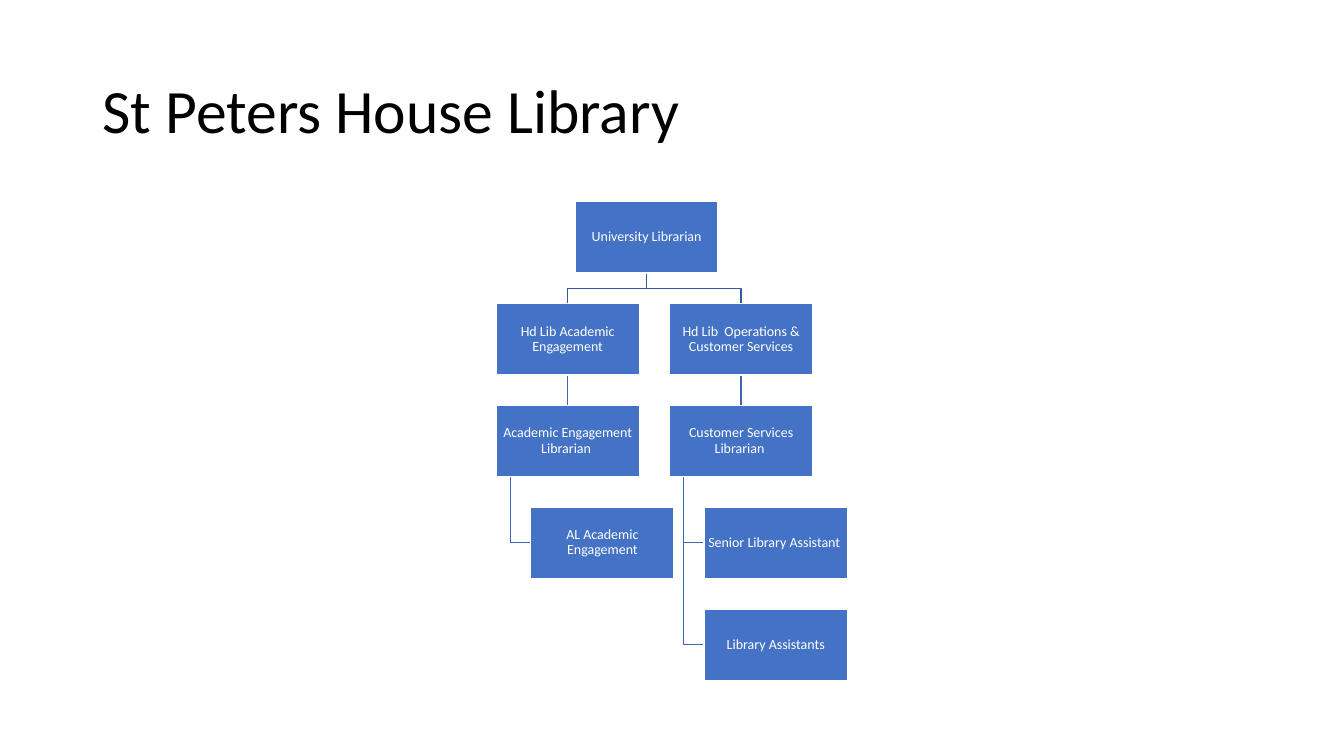
"""Build the St Peters House Library staff chart."""
from dataclasses import dataclass
from typing import Optional

from lxml import etree
from pptx import Presentation
from pptx.dml.color import RGBColor
from pptx.enum.shapes import MSO_CONNECTOR, MSO_SHAPE
from pptx.enum.text import MSO_ANCHOR, PP_ALIGN
from pptx.oxml.ns import qn
from pptx.util import Inches, Pt

RECTANGLE = MSO_SHAPE.RECTANGLE
STRAIGHT = MSO_CONNECTOR.STRAIGHT
MIDDLE = MSO_ANCHOR.MIDDLE
LEFT, CENTER = PP_ALIGN.LEFT, PP_ALIGN.CENTER

BLACK = RGBColor(0x00, 0x00, 0x00)
WHITE = RGBColor(0xFF, 0xFF, 0xFF)
BOX_BLUE = RGBColor(0x44, 0x72, 0xC4)
TOP_LINK_BLUE = RGBColor(0x36, 0x5B, 0x9D)
LINK_BLUE = RGBColor(0x3E, 0x67, 0xB2)

GRID_LEFT, GRID_TOP = 4.92, 2.0
COLUMN_STEP, ROW_STEP = 1.72, 1.01
BOX_WIDTH, BOX_HEIGHT = 1.42, 0.71
HANG_SHARE = 0.1
INDENT = 0.2

TITLE_FONT = {"name": "Calibri", "size": Pt(44)}
POST_FONT = {"name": "Calibri", "size": Pt(10)}
TITLE_PARA = {"alignment": LEFT, "line_spacing": 0.9}
POST_PARA = {"alignment": CENTER, "line_spacing": 0.9, "space_after": Pt(3.5)}
FRAME = {"word_wrap": True, "vertical_anchor": MIDDLE}
POST_FRAME = FRAME | {f"margin_{side}": Inches(0.01) for side in ("left", "top", "right", "bottom")}


@dataclass(frozen=True)
class Post:
    """A post on the chart, placed by grid column and row."""
    label: str
    column: float
    row: int
    manager: Optional["Post"] = None
    hangs: bool = False

    @property
    def left(self) -> float:
        """Return the left edge in inches."""
        return GRID_LEFT + self.column * COLUMN_STEP

    @property
    def top(self) -> float:
        """Return the top edge in inches."""
        return GRID_TOP + self.row * ROW_STEP


HEAD = Post("University Librarian", 0.455, 0)
ACADEMIC = Post("Hd Lib Academic Engagement", 0, 1, HEAD)
ENGAGEMENT = Post("Academic Engagement Librarian ", 0, 2, ACADEMIC)
OPERATIONS = Post("Hd Lib  Operations & Customer Services", 1, 1, HEAD)
CUSTOMER = Post("Customer Services Librarian ", 1, 2, OPERATIONS)
POSTS = [
    HEAD, ACADEMIC, ENGAGEMENT,
    Post("AL Academic Engagement", INDENT, 3, ENGAGEMENT, True),
    OPERATIONS, CUSTOMER,
    Post("Senior Library Assistant ", 1 + INDENT, 3, CUSTOMER, True),
    Post("Library Assistants", 1 + INDENT, 4, CUSTOMER, True),
]


def apply_format(target: object, values: dict) -> None:
    """Set each named attribute on the target."""
    for name, value in values.items():
        setattr(target, name, value)


def write_text(box, text: str, frame: dict, para_format: dict, font: dict, color: RGBColor) -> None:
    """Write one formatted paragraph into a box."""
    apply_format(box.text_frame, frame)
    para = box.text_frame.paragraphs[0]
    apply_format(para, para_format)
    span = para.add_run()
    span.text = text
    apply_format(span.font, font)
    span.font.color.rgb = color


def link_points(manager: Post, post: Post) -> list[tuple[int, int]]:
    """Return the corners of the line from a manager to a post."""
    bottom = manager.top + BOX_HEIGHT
    if post.hangs:
        start = manager.left + HANG_SHARE * BOX_WIDTH
        middle = post.top + BOX_HEIGHT / 2
        corners = [(start, bottom), (start, middle), (post.left, middle)]
    else:
        start, end = manager.left + BOX_WIDTH / 2, post.left + BOX_WIDTH / 2
        bend = (bottom + post.top) / 2
        corners = [(start, bottom), (start, bend), (end, bend), (end, post.top)]
        if manager.column == post.column:
            corners = [corners[0], corners[-1]]
    return [(Inches(x), Inches(y)) for x, y in corners]


def draw_link(page, manager: Post, post: Post) -> None:
    """Draw the line from a manager to a post."""
    points = link_points(manager, post)
    if len(points) == 2:
        link = page.shapes.add_connector(STRAIGHT, *points[0], *points[1])
        etree.SubElement(link._element.spPr, qn("a:effectLst"))
    else:
        outline = page.shapes.build_freeform(*points[0])
        outline.add_line_segments(points[1:], close=False)
        link = outline.convert_to_shape()
        link.shadow.inherit = False
        link.fill.background()
    link.line.color.rgb = TOP_LINK_BLUE if manager is HEAD else LINK_BLUE
    link.line.width = Pt(1)


def draw_post(page, post: Post) -> None:
    """Draw the box of a post."""
    box = page.shapes.add_shape(
        RECTANGLE, Inches(post.left), Inches(post.top), Inches(BOX_WIDTH), Inches(BOX_HEIGHT))
    box.shadow.inherit = False
    box.fill.solid()
    box.fill.fore_color.rgb = BOX_BLUE
    box.line.color.rgb = WHITE
    box.line.width = Pt(1)
    write_text(box, post.label, POST_FRAME, POST_PARA, POST_FONT, WHITE)


def main() -> None:
    """Build and save the deck."""
    deck = Presentation()
    deck.slide_width, deck.slide_height = Inches(13.33), Inches(7.5)
    page = deck.slides.add_slide(deck.slide_layouts[6])
    title = page.shapes.add_textbox(Inches(0.92), Inches(0.4), Inches(11.5), Inches(1.45))
    write_text(title, "St Peters House Library", FRAME, TITLE_PARA, TITLE_FONT, BLACK)
    for post in reversed(POSTS):
        if post.manager:
            draw_link(page, post.manager, post)
    for post in POSTS:
        draw_post(page, post)
    deck.save("out.pptx")


if __name__ == "__main__":
    main()
